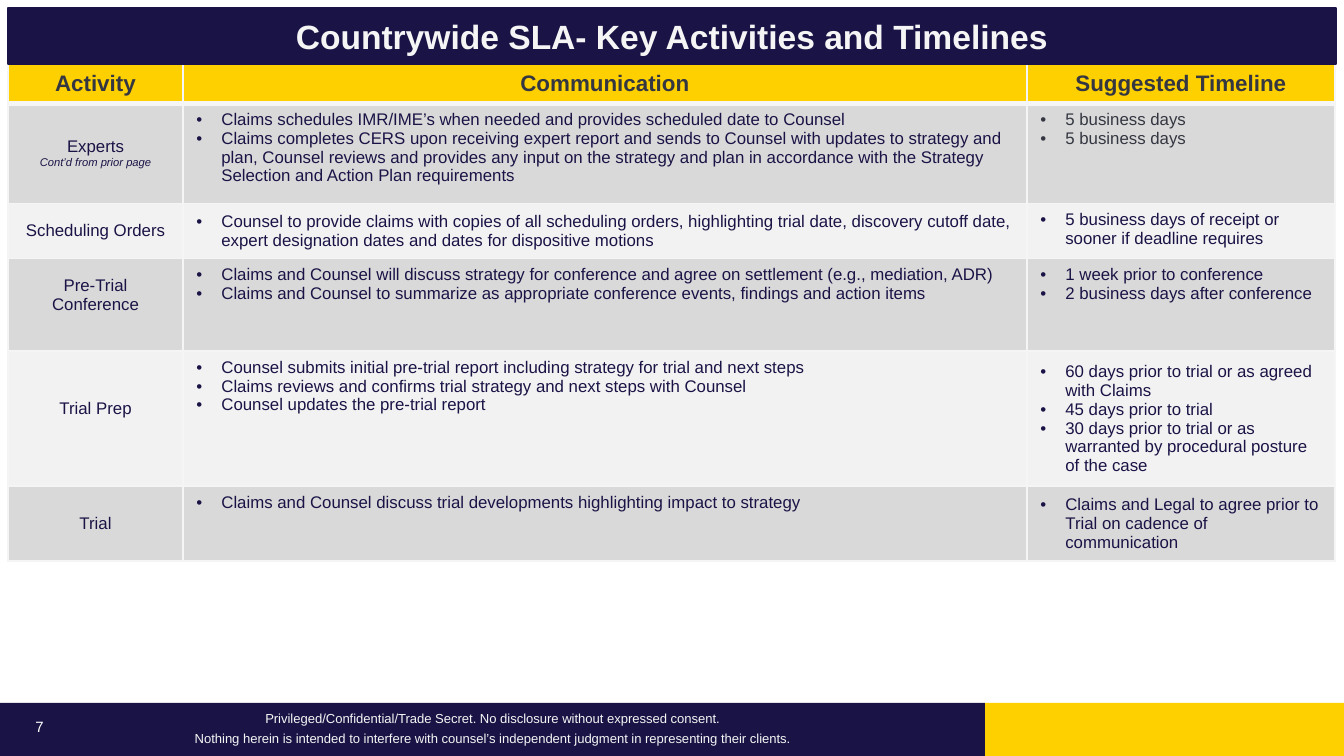
from lxml.etree import SubElement
from pptx import Presentation
from pptx.dml.color import RGBColor
from pptx.enum.shapes import MSO_SHAPE as SHAPE
from pptx.enum.text import MSO_ANCHOR as ANCHOR, PP_ALIGN as ALIGN
from pptx.oxml.ns import qn
from pptx.util import Pt

NAVY = RGBColor(0x1A, 0x14, 0x46)
YELLOW = RGBColor(0xFF, 0xD0, 0x00)
CHARCOAL = RGBColor(0x34, 0x37, 0x41)
OFF_WHITE = RGBColor(0xF5, 0xF5, 0xF5)
WHITE = RGBColor(0xFF, 0xFF, 0xFF)
BANDS = [RGBColor(0xD9, 0xD9, 0xD9), RGBColor(0xF2, 0xF2, 0xF2)]

PX = 914400 / 134.4  # EMU in one px


def px(n):
    return round(n * PX)


def write(tf, lines, size=9, color=NAVY, bold=False, align=ALIGN.LEFT,
          bullet=False, spacing=1.0, gap=0):
    """Fill a text frame with one paragraph per line."""
    for i, line in enumerate(lines):
        p = tf.paragraphs[0] if i == 0 else tf.add_paragraph()
        p.alignment = align
        p.line_spacing = spacing
        p.space_before = Pt(gap if i else 0)
        if bullet:
            pPr = p._p.get_or_add_pPr()
            pPr.set("marL", str(px(25)))
            pPr.set("indent", str(px(-25)))
            SubElement(pPr, qn("a:buFont"), typeface="Arial")
            SubElement(pPr, qn("a:buChar"), char="•")
        r = p.add_run()
        r.text = line
        r.font.name = "Arial"
        r.font.size = Pt(size)
        r.font.bold = bold
        r.font.color.rgb = color


prs = Presentation()
prs.slide_width, prs.slide_height = px(1344), px(756)
s = prs.slides.add_slide(prs.slide_layouts[5])

# Footer bars
bars = []
for left, width, color in [(985, 359, YELLOW), (0, 985, NAVY)]:
    sp = s.shapes.add_shape(SHAPE.RECTANGLE, px(left), px(703), px(width), px(53))
    sp.shadow.inherit = False
    sp.fill.solid()
    sp.fill.fore_color.rgb = color
    sp.line.fill.background()
    bars.append(sp)
tf = bars[1].text_frame
tf.vertical_anchor = ANCHOR.MIDDLE
write(tf, [
    "Privileged/Confidential/Trade Secret. No disclosure without expressed consent.",
    "Nothing herein is intended to interfere with counsel’s independent judgment "
    "in representing their clients.",
], size=7, color=OFF_WHITE, align=ALIGN.CENTER, spacing=0.85, gap=3.5)

# Page number
tf = s.shapes.add_textbox(px(11), px(714), px(46), px(30)).text_frame
write(tf, ["7"], size=8, color=WHITE, align=ALIGN.RIGHT, spacing=0.85)

# Table content: height, activity, communication, timeline
HEADERS = ["Activity", "Communication", "Suggested Timeline"]
ROWS = [
    (100, ["Experts", "Cont’d from prior page"],
     ["Claims schedules IMR/IME’s when needed and provides scheduled date to Counsel",
      "Claims completes CERS upon receiving expert report and sends to Counsel with "
      "updates to strategy and plan, Counsel reviews and provides any input on the "
      "strategy and plan in accordance with the Strategy Selection and Action Plan "
      "requirements"],
     ["5 business days", "5 business days"]),
    (55, ["Scheduling Orders"],
     ["Counsel to provide claims with copies of all scheduling orders, highlighting "
      "trial date, discovery cutoff date, expert designation dates and dates for "
      "dispositive motions"],
     ["5 business days of receipt or sooner if deadline requires"]),
    (93, ["Pre-Trial Conference"],
     ["Claims and Counsel will discuss strategy for conference and agree on "
      "settlement (e.g., mediation, ADR)",
      "Claims and Counsel to summarize as appropriate conference events, findings "
      "and action items"],
     ["1 week prior to conference", "2 business days after conference"]),
    (135, ["Trial Prep"],
     ["Counsel submits initial pre-trial report including strategy for trial and "
      "next steps",
      "Claims reviews and confirms trial strategy and next steps with Counsel",
      "Counsel updates the pre-trial report"],
     ["60 days prior to trial or as agreed with Claims", "45 days prior to trial",
      "30 days prior to trial or as warranted by procedural posture of the case"]),
    (75, ["Trial"],
     ["Claims and Counsel discuss trial developments highlighting impact to strategy"],
     ["Claims and Legal to agree prior to Trial on cadence of communication"]),
]
MIDDLE_CELLS = {(2, 1), (4, 2), (5, 2)}  # bulleted cells anchored in the middle
RAISED_ROWS = {3, 4}                     # activity sits half a line higher

heights = [40] + [row[0] for row in ROWS]
widths = [175, 844, 308]
table = s.shapes.add_table(len(heights), len(widths), px(8), px(63),
                           px(sum(widths)), px(sum(heights))).table
for column, width in zip(table.columns, widths):
    column.width = px(width)
for row, height in zip(table.rows, heights):
    row.height = px(height)

# Header row
for c, text in enumerate(HEADERS):
    cell = table.cell(0, c)
    cell.vertical_anchor = ANCHOR.MIDDLE
    write(cell.text_frame, [text], size=12, color=CHARCOAL, bold=True,
          align=ALIGN.CENTER)

# Body rows
for r, (_, *columns) in enumerate(ROWS, 1):
    for c, lines in enumerate(columns):
        cell = table.cell(r, c)
        middle = c == 0 or (r, c) in MIDDLE_CELLS
        cell.vertical_anchor = ANCHOR.MIDDLE if middle else ANCHOR.TOP
        write(cell.text_frame, lines, bullet=c > 0,
              color=CHARCOAL if (r, c) == (1, 2) else NAVY,
              align=ALIGN.LEFT if c else ALIGN.CENTER)
    if r in RAISED_ROWS:
        table.cell(r, 0).margin_bottom = px(26)
note = table.cell(1, 0).text_frame.paragraphs[1].runs[0]
note.font.size = Pt(6)
note.font.italic = True

# Cell borders and fills
for r in range(len(heights)):
    for c in range(len(widths)):
        cell = table.cell(r, c)
        tcPr = cell._tc.get_or_add_tcPr()
        for side in ("L", "R", "T", "B"):
            thick = (r, side) in {(0, "B"), (1, "T")}
            ln = SubElement(tcPr, qn(f"a:ln{side}"), w=str(Pt(3 if thick else 1)))
            fill = SubElement(ln, qn("a:solidFill"))
            SubElement(fill, qn("a:srgbClr"), val=str(OFF_WHITE))
        cell.fill.solid()
        cell.fill.fore_color.rgb = BANDS[(r - 1) % 2] if r else YELLOW

# Title banner, in front of the table
title = s.shapes.title
title.left, title.top, title.width, title.height = px(8), px(8), px(1328), px(56)
geom = SubElement(title._element.spPr, qn("a:prstGeom"), prst="roundRect")
SubElement(geom, qn("a:avLst"))
title.fill.solid()
title.fill.fore_color.rgb = NAVY
title.line.color.rgb = NAVY
title.line.width = Pt(1)
title.text_frame.vertical_anchor = ANCHOR.MIDDLE
write(title.text_frame, ["Countrywide SLA- Key Activities and Timelines"],
      size=18, color=OFF_WHITE, bold=True, align=ALIGN.CENTER)
s.shapes._spTree.append(title._element)

prs.save("out.pptx")
